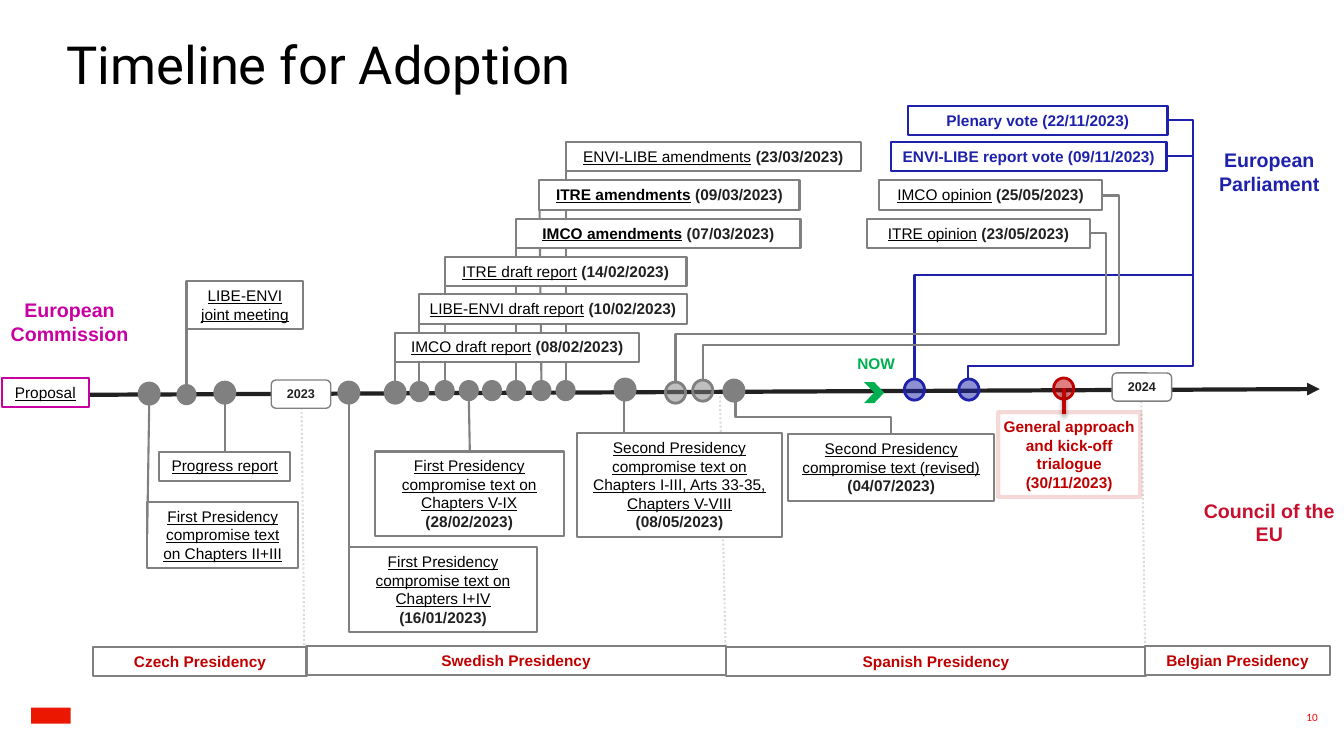
"""Build the slide with the timeline for adoption of the regulation."""
import dataclasses
import typing

import lxml.etree
import pptx
import pptx.dml.color
import pptx.enum.dml
import pptx.enum.shapes
import pptx.enum.text
import pptx.oxml.ns
import pptx.util

RGBColor = pptx.dml.color.RGBColor
Shapes = pptx.enum.shapes.MSO_SHAPE
Align = pptx.enum.text.PP_ALIGN
BLACK = RGBColor(0x00, 0x00, 0x00)
INK = RGBColor(0x21, 0x21, 0x21)
WHITE = RGBColor(0xFF, 0xFF, 0xFF)
GREY = RGBColor(0x80, 0x80, 0x80)
PALE = RGBColor(0xDC, 0xDC, 0xDC)
BLUE = RGBColor(0x1E, 0x22, 0xAA)
RED = RGBColor(0xC0, 0x00, 0x00)
CRIMSON = RGBColor(0xC8, 0x10, 0x2E)
MAGENTA = RGBColor(0xC8, 0x00, 0xA1)
GREEN = RGBColor(0x00, 0xB0, 0x50)
BRIGHT_RED = RGBColor(0xFF, 0x00, 0x00)
MARK_RED = RGBColor(0xEB, 0x17, 0x00)


@dataclasses.dataclass
class Span:
    text: str
    color: RGBColor = INK
    size: float = 11
    bold: bool = True
    underline: bool = False
    font: str = "Arial"


@dataclasses.dataclass
class Box:
    left: float
    top: float
    width: float
    height: float
    linked: str = ""
    plain: str = ""
    edge: RGBColor = GREY
    ink: RGBColor = INK
    filled: bool = True
    inset: float = 0.1
    bold_link: bool = False
    size: float = 11
    weight: float = 1.5
    form: Shapes = Shapes.RECTANGLE
    edge_opacity: int = 100


class Dot(typing.NamedTuple):
    left: float
    top: float
    color: RGBColor = GREY
    outlined: bool = True
    opacity: int = 100


class Stem(typing.NamedTuple):
    x1: float
    y1: float
    x2: float
    y2: float
    color: RGBColor = GREY
    weight: float = 1.5
    dotted: bool = False


class Elbow(typing.NamedTuple):
    start: tuple[float, float]
    end: tuple[float, float]
    via: tuple[float, float]
    color: RGBColor = GREY


def inch(value: float) -> int:
    return pptx.util.Cm(value * 2.54)


def child(parent, tag: str, **attributes: str):
    return lxml.etree.SubElement(parent, pptx.oxml.ns.qn(tag), **attributes)


def set_opacity(owner, percent: int) -> None:
    color = next(owner.iter(pptx.oxml.ns.qn("a:srgbClr")))
    child(color, "a:alpha", val=str(percent * 1000))


def write(frame, spans: list[Span], inset: float = 0.1, upright: float = 0.05, align=Align.CENTER) -> None:
    frame.word_wrap = True
    frame.auto_size = pptx.enum.text.MSO_AUTO_SIZE.SHAPE_TO_FIT_TEXT
    frame.vertical_anchor = pptx.enum.text.MSO_ANCHOR.TOP
    frame.margin_left = frame.margin_right = inch(inset)
    frame.margin_top = frame.margin_bottom = inch(upright)
    para = frame.paragraphs[0]
    for item in spans:
        for row, block in enumerate(item.text.split("\n")):
            para = frame.add_paragraph() if row else para
            for part, text in enumerate(block.split("\v")):
                if part:
                    para.add_line_break()
                if text:
                    span = para.add_run()
                    span.text = text
                    span.font.name, span.font.size = item.font, pptx.util.Pt(item.size)
                    span.font.bold, span.font.underline = item.bold, item.underline
                    span.font.color.rgb = item.color
    for para in frame.paragraphs:
        para.alignment = align


def add_form(page, form: Shapes, place: tuple, fill: RGBColor | None, edge: RGBColor | None = None, weight: float = 2):
    shape = page.shapes.add_shape(form, *map(inch, place))
    shape.shadow.inherit = False
    if fill is None:
        shape.fill.background()
    else:
        shape.fill.solid()
        shape.fill.fore_color.rgb = fill
    if edge is None:
        shape.line.fill.background()
    else:
        shape.line.color.rgb = edge
        shape.line.width = pptx.util.Pt(weight)
    return shape


def add_box(page, box: Box) -> None:
    shape = add_form(page, box.form, (box.left, box.top, box.width, box.height),
                     WHITE if box.filled else None, box.edge, box.weight)
    if box.edge_opacity < 100:
        set_opacity(shape.line._ln, box.edge_opacity)
    gap = " " if box.linked and box.plain and not box.linked.endswith("\v") else ""
    write(shape.text_frame, [Span(box.linked, BLACK, box.size, box.bold_link, True),
                             Span(gap + box.plain, box.ink, box.size)], box.inset)


def add_dot(page, dot: Dot) -> None:
    shape = add_form(page, Shapes.OVAL, (dot.left, dot.top, 0.2, 0.21), dot.color, dot.color if dot.outlined else None)
    if dot.opacity < 100:
        set_opacity(shape.fill._xPr.find(pptx.oxml.ns.qn("a:solidFill")), dot.opacity)


def add_line(page, stem: Stem, kind=pptx.enum.shapes.MSO_CONNECTOR.STRAIGHT):
    line = page.shapes.add_connector(kind, *map(inch, stem[:4]))
    line.line.color.rgb = stem.color
    line.line.width = pptx.util.Pt(stem.weight)
    if stem.dotted:
        line.line.dash_style = pptx.enum.dml.MSO_LINE.ROUND_DOT
    return line, child(line._element.spPr, "a:effectLst")


def add_elbow(page, elbow: Elbow) -> None:
    (x1, y1), (x2, y2), (via_x, via_y) = elbow.start, elbow.end, elbow.via
    line, _ = add_line(page, Stem(x1, y1, x2, y2, elbow.color), pptx.enum.shapes.MSO_CONNECTOR.ELBOW)
    geometry = line._element.spPr.find(pptx.oxml.ns.qn("a:prstGeom"))
    geometry.set("prst", "bentConnector4")
    for name, ratio in (("adj1", (via_x - x1) / (x2 - x1)), ("adj2", (via_y - y1) / (y2 - y1))):
        child(geometry[0], "a:gd", name=name, fmla=f"val {round(ratio * 100000)}")


def add_label(page, place: tuple, span: Span, **layout):
    box = page.shapes.add_textbox(*map(inch, place))
    write(box.text_frame, [span], **layout)
    return box.text_frame


BACK_STEMS = [Stem(5.61, 1.56, 5.61, 3.77), Stem(4.41, 2.69, 4.41, 3.77), Stem(4.16, 3.07, 4.16, 3.78),
              Stem(5.35, 1.94, 5.37, 3.77), Stem(5.12, 2.31, 5.12, 3.77), Stem(3.92, 3.45, 3.92, 3.79),
              *[Stem(x1, y1, x2, 6.59, PALE, dotted=True) for x1, y1, x2 in (
                  (2.99, 3.96, 3.02), (7.14, 3.89, 7.2), (11.32, 3.98, 11.36))]]
FRONT_STEMS = [Stem(2.23, 4, 2.23, 4.48), Stem(1.48, 4.01, 1.46, 5.3), Stem(3.46, 3.99, 3.46, 5.85),
               Stem(1.85, 3.02, 1.85, 3.81), Stem(4.65, 3.97, 4.66, 4.48), Stem(6.19, 3.92, 6.19, 4.3)]
BOXES = [
    *[Box(left, top, 0.59, 0.28, plain=year, size=9, weight=1, form=Shapes.ROUNDED_RECTANGLE)
      for left, top, year in ((2.69, 3.77, "2023"), (11.03, 3.7, "2024"))],
    *[Box(left, top, width, 0.29, plain=f"{country} Presidency", ink=RED) for left, top, width, country in (
        (0.92, 6.42, 2.13, "Czech"), (3.04, 6.41, 4.16, "Swedish"),
        (7.2, 6.42, 4.17, "Spanish"), (11.36, 6.41, 1.83, "Belgian"))],
    Box(0.02, 3.75, 0.86, 0.29, "Proposal", edge=MAGENTA),
    Box(1.58, 4.48, 1.3, 0.29, "Progress report", filled=False, inset=0.04),
    Box(1.46, 4.98, 1.5, 0.66, "First Presidency compromise text on Chapters II+III", filled=False),
    Box(3.46, 5.43, 1.87, 0.84, "First Presidency compromise text on Chapters I+IV", "(16/01/2023)", filled=False),
    Box(1.85, 2.79, 1.16, 0.47, "LIBE-ENVI\vjoint meeting"),
    Box(3.92, 3.3, 2.42, 0.29, "IMCO draft report", "(08/02/2023)", inset=0.04),
    Box(5.12, 2.17, 2.82, 0.29, "IMCO amendments", "(07/03/2023)", inset=0.04, bold_link=True),
    Box(5.35, 1.79, 2.58, 0.29, "ITRE amendments", "(09/03/2023)", bold_link=True),
    Box(5.61, 1.41, 2.93, 0.29, "ENVI-LIBE amendments", "(23/03/2023)"),
    Box(3.72, 4.48, 1.87, 0.84, "First Presidency compromise text on Chapters V-IX", "(28/02/2023)", filled=False),
    Box(4.16, 2.92, 2.65, 0.29, "LIBE-ENVI draft report", "(10/02/2023)", inset=0.04),
    Box(4.41, 2.55, 2.4, 0.29, "ITRE draft report", "(14/02/2023)", inset=0.04),
    Box(8.72, 1.79, 2.21, 0.29, "IMCO opinion", "(25/05/2023)"),
    Box(8.84, 1.41, 2.73, 0.29, plain="ENVI-LIBE report vote (09/11/2023)", edge=BLUE, ink=BLUE),
    Box(9.01, 1.05, 2.57, 0.29, plain="Plenary vote (22/11/2023)", edge=BLUE, ink=BLUE),
    Box(9.9, 4.09, 1.41, 0.84, plain="General approach\nand kick-off trialogue (30/11/2023)", edge=RED, ink=RED,
        filled=False, inset=0.04, weight=3, edge_opacity=15),
    Box(8.6, 2.17, 2.21, 0.29, "ITRE opinion", "(23/05/2023)"),
    Box(5.72, 4.3, 2.04, 1.03, "Second Presidency compromise text on Chapters I-III, Arts 33-35, Chapters V-VIII",
        "(08/05/2023)"),
    Box(7.82, 4.31, 2.04, 0.66, "Second Presidency compromise text (revised)\v", "(04/07/2023)", filled=False)]
DOTS = [Dot(2.13, 3.79), Dot(1.38, 3.8), Dot(3.36, 3.79), Dot(3.82, 3.79), Dot(6.1, 3.76), Dot(7.18, 3.77),
        Dot(1.75, 3.81, outlined=False), Dot(4.06, 3.78, outlined=False),
        *[Dot(left, 3.77, outlined=False) for left in (4.31, 4.55, 4.78, 5.02, 5.27, 5.51)],
        Dot(6.87, 3.77, opacity=50), Dot(6.6, 3.79, opacity=50), Dot(8.97, 3.76, BLUE, opacity=50),
        Dot(9.51, 3.76, BLUE, opacity=50), Dot(10.45, 3.75, RED, opacity=50)]
ELBOWS = [Elbow((11.58, 1.55), (9.07, 3.76), (11.83, 2.73), BLUE), Elbow((11.58, 1.19), (9.6, 3.76), (11.83, 3.63), BLUE),
          Elbow((10.81, 2.31), (6.7, 3.79), (10.97, 3.31)), Elbow((10.93, 1.94), (6.97, 3.77), (11.1, 3.42))]
INSTITUTIONS = [((11.81, 1.42, 1.56, 0.57), "European Parliament", BLUE),
                ((11.81, 4.9, 1.56, 0.57), "Council of the EU", CRIMSON),
                ((0, 2.91, 1.38, 0.57), "European Commission", MAGENTA)]


def main() -> None:
    deck = pptx.Presentation()
    deck.slide_width, deck.slide_height = inch(13.33), inch(7.5)
    page = deck.slides.add_slide(deck.slide_layouts[6])
    add_form(page, Shapes.RECTANGLE, (0.31, 7.02, 0.39, 0.16), MARK_RED)
    title = add_label(page, (0.66, 0.41, 12.01, 0.55), Span("Timeline for Adoption", BLACK, 37.5, False, font="Roboto"),
                      inset=0, upright=0, align=Align.LEFT)
    number = add_label(page, (12.67, 6.93, 0.5, 0.36), Span("10", BRIGHT_RED, 8, False, font="Calibri"), align=Align.RIGHT)
    number.auto_size = pptx.enum.text.MSO_AUTO_SIZE.NONE
    number.vertical_anchor = pptx.enum.text.MSO_ANCHOR.MIDDLE
    for frame, spacing in ((title, 0.85), (number, 1.1)):
        para = frame.paragraphs[0]
        para.line_spacing = spacing
        para.space_before = para.space_after = pptx.util.Pt(6)
    for stem in BACK_STEMS:
        add_line(page, stem)
    axis, _ = add_line(page, Stem(0.2, 3.92, 13.09, 3.86, INK, 3))
    child(axis.line._ln, "a:tailEnd", type="triangle")
    for box in BOXES:
        add_box(page, box)
    for dot in DOTS:
        add_dot(page, dot)
    for stem in FRONT_STEMS:
        add_line(page, stem)
    for elbow in ELBOWS:
        add_elbow(page, elbow)
    revised, _ = add_line(page, Stem(8.23, 3.37, 7.9, 4.91), pptx.enum.shapes.MSO_CONNECTOR.ELBOW)
    revised._element.spPr.find(pptx.oxml.ns.qn("a:xfrm")).set("rot", str(270 * 60000))
    _, effects = add_line(page, Stem(10.55, 3.85, 10.55, 4.11, RED, 3))
    shadow = child(effects, "a:outerShdw", blurRad="40000", dist="23000", dir="5400000", rotWithShape="0")
    child(shadow, "a:srgbClr", val=str(BLACK))
    set_opacity(shadow, 35)
    add_form(page, Shapes.CHEVRON, (8.57, 3.79, 0.2, 0.21), GREEN)
    add_label(page, (8.44, 3.46, 0.5, 0.29), Span("NOW", GREEN), inset=0.04)
    for place, name, color in INSTITUTIONS:
        add_label(page, place, Span(name, color, 14))
    deck.save("out.pptx")


if __name__ == "__main__":
    main()
